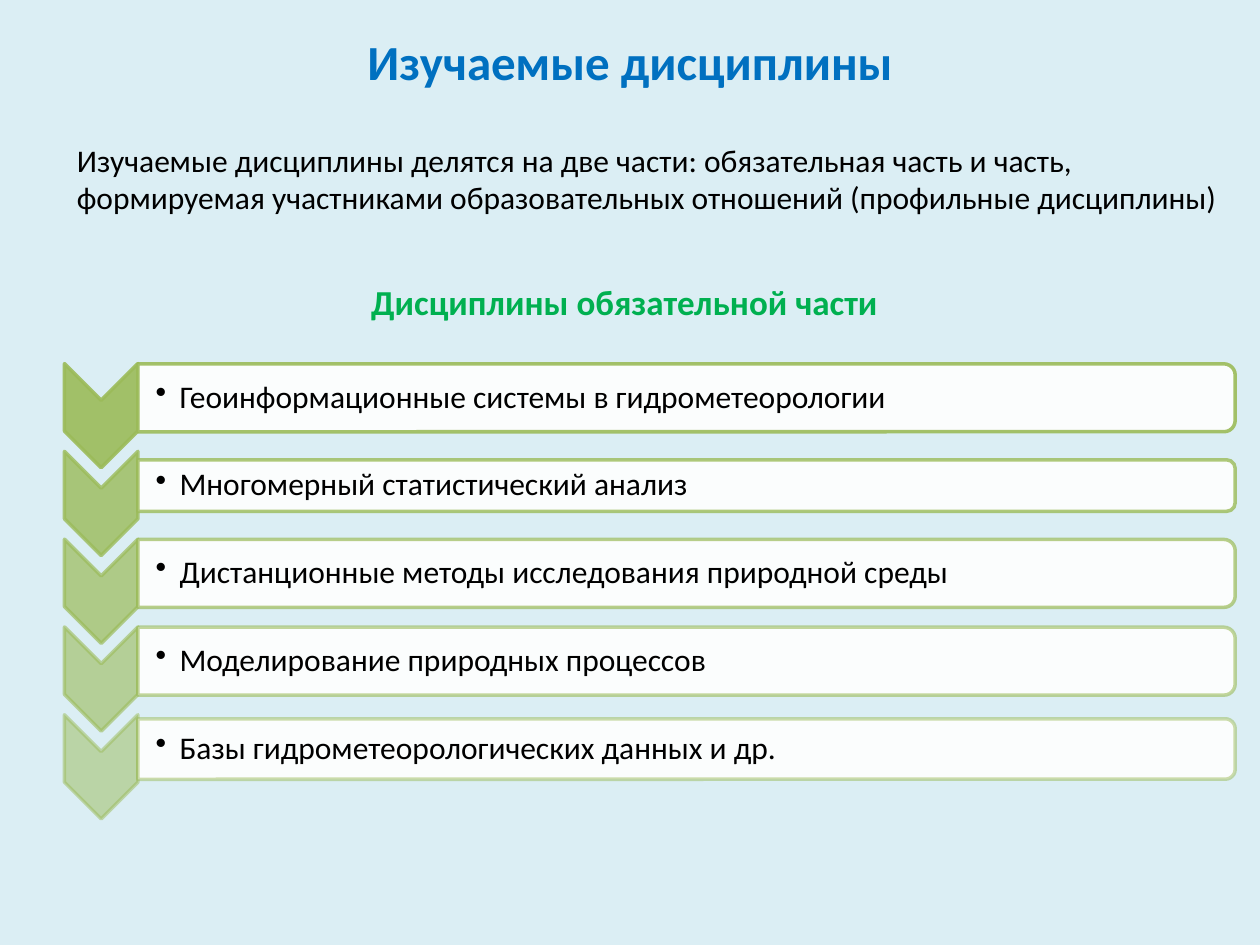
import pptx
import pptx.dml.color
import pptx.enum.shapes
import pptx.enum.text
import pptx.oxml
import pptx.oxml.ns
import pptx.util
from lxml import etree

Cm = pptx.util.Cm
Pt = pptx.util.Pt
SHAPE = pptx.enum.shapes.MSO_SHAPE
ANCHOR = pptx.enum.text.MSO_ANCHOR
ALIGN = pptx.enum.text.PP_ALIGN
qn = pptx.oxml.ns.qn

FONT = "Calibri"
COLORS = {
    "background": "DBEEF4",
    "title": "0070C0",
    "heading": "00B050",
    "text": "000000",
    "accent": "9BBB59",
    "bar": "FFFFFF",
}

# Discipline and the height of its bar in centimetres
DISCIPLINES = [
    ("Геоинформационные системы в гидрометеорологии", 1.37),
    ("Многомерный статистический анализ", 1.04),
    ("Дистанционные методы исследования природной среды", 1.37),
    ("Моделирование природных процессов", 1.37),
    ("Базы гидрометеорологических данных и др.", 1.22),
]


def rgb(name):
    return pptx.dml.color.RGBColor.from_string(COLORS[name])


def paint(fill, name, opacity):
    """Fill with a named colour at an opacity given in percent."""
    fill.solid()
    fill.fore_color.rgb = rgb(name)
    color = fill._xPr.find(qn("a:solidFill")).find(qn("a:srgbClr"))
    etree.SubElement(color, qn("a:alpha")).set("val", str(opacity * 1000))


def add_text(slide, box, text, size, color="text", bold=False,
             align=ALIGN.LEFT, anchor=ANCHOR.TOP):
    frame = slide.shapes.add_textbox(*map(Cm, box)).text_frame
    frame.word_wrap = True
    frame.vertical_anchor = anchor
    frame.text = text
    paragraph = frame.paragraphs[0]
    paragraph.alignment = align
    font = paragraph.runs[0].font
    font.name, font.size, font.bold = FONT, Pt(size), bold
    font.color.rgb = rgb(color)
    return frame


def add_turned_shape(slide, kind, center_x, center_y, width, height,
                     fill, fill_opacity, line_opacity):
    """Add a shape turned by 90 degrees that covers width by height as seen."""
    shape = slide.shapes.add_shape(
        kind, Cm(center_x - height / 2), Cm(center_y - width / 2),
        Cm(height), Cm(width))
    shape.rotation = 90
    shape.shadow.inherit = False
    paint(shape.fill, fill, fill_opacity)
    shape.line.width = Pt(2)
    paint(shape.line.fill, "accent", line_opacity)


def add_bullet(frame):
    frame.margin_left = Cm(0.36)
    frame.margin_top = frame.margin_right = frame.margin_bottom = Cm(0.03)
    paragraph = frame.paragraphs[0]
    paragraph.line_spacing = 0.9
    properties = paragraph._p.get_or_add_pPr()
    properties.set("marL", str(Cm(0.48)))
    properties.set("indent", str(-Cm(0.48)))
    etree.SubElement(properties, qn("a:buChar")).set("char", "•")


def add_intro(slide, left, top, width):
    add_text(slide, (left, top, width, 1.4), "Изучаемые дисциплины", 28, "title",
             True, ALIGN.CENTER, ANCHOR.MIDDLE)
    add_text(slide, (left + 1.3, top + 2.18, width - 1.8, 1.8),
             "Изучаемые дисциплины делятся на две части: обязательная часть и часть, "
             "формируемая участниками образовательных отношений "
             "(профильные дисциплины)", 18)
    add_text(slide, (left - 0.03, top + 5, width, 1.12),
             "Дисциплины обязательной части ", 20, "heading", True, ALIGN.CENTER)


def add_chevron_list(slide, left, top, width):
    chevron_width, chevron_height, pitch = 1.48, 2.1, 1.77
    bar_left, bar_width = left + chevron_width, width - chevron_width
    for row, (discipline, bar_height) in enumerate(DISCIPLINES):
        row_top = top + row * pitch
        bar_middle = row_top + 0.69
        opacity = 90 - 10 * row
        add_turned_shape(slide, SHAPE.CHEVRON, left + chevron_width / 2,
                         row_top + chevron_height / 2, chevron_width,
                         chevron_height, "accent", opacity, opacity)
        add_turned_shape(slide, SHAPE.ROUND_2_SAME_RECTANGLE,
                         bar_left + bar_width / 2, bar_middle, bar_width,
                         bar_height, "bar", 90, opacity)
        text_height = bar_height - 0.12
        add_bullet(add_text(
            slide, (bar_left, bar_middle - text_height / 2,
                    bar_width - 0.07, text_height),
            discipline, 18, anchor=ANCHOR.MIDDLE))


def main():
    presentation = pptx.Presentation()
    presentation.slide_width, presentation.slide_height = Cm(25.4), Cm(19.05)
    slide = presentation.slides.add_slide(presentation.slide_layouts[6])
    slide.background.fill.solid()
    slide.background.fill.fore_color.rgb = rgb("background")
    add_intro(slide, 0, 0.53, 25.4)
    add_chevron_list(slide, 1.3, 7.33, 23.6)
    presentation.save("out.pptx")


if __name__ == "__main__":
    main()
